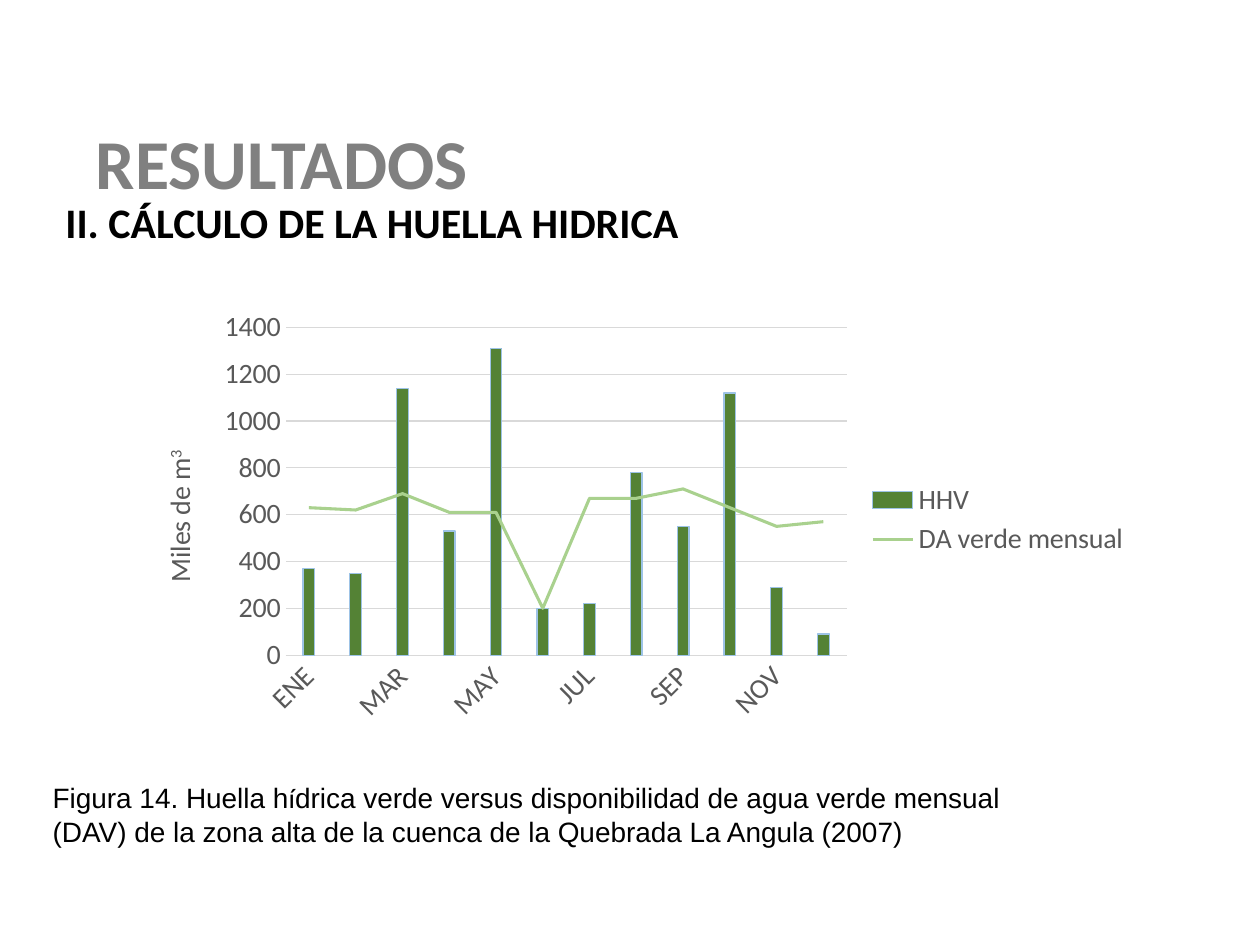
from copy import deepcopy
from lxml.etree import SubElement
from pptx import Presentation
from pptx.chart.data import CategoryChartData
from pptx.dml.color import RGBColor
from pptx.enum.chart import XL_CHART_TYPE, XL_LEGEND_POSITION, XL_MARKER_STYLE, XL_TICK_MARK
from pptx.enum.text import MSO_ANCHOR, PP_ALIGN
from pptx.oxml import parse_xml
from pptx.oxml.ns import nsdecls, qn
from pptx.util import Inches, Pt

# Content
TITLE = "RESULTADOS"
HEAD = "II. CÁLCULO DE LA HUELLA HIDRICA"
NOTE = ("Figura 14. Huella h", "í", "drica verde versus disponibilidad de agua verde "
        "mensual (DAV) de la zona alta de la cuenca de la Quebrada La Angula (2007)")
UNIT = ("Miles de m", "3")
MONTHS = ["ENE", "FEB", "MAR", "ABR.", "MAY", "JUN",
          "JUL", "AGO", "SEP", "OCT", "NOV", "DIC"]
SERIES = {
    "HHV": [370, 350, 1140, 530, 1310, 200, 220, 780, 550, 1120, 290, 90],
    "DA verde mensual": [630, 620, 690, 610, 610, 200, 670, 670, 710, 630, 550, 570],
}
PLOT = {"x": 0.16, "y": 0.06, "w": 0.55, "h": 0.75}  # shares of the chart frame
GRAY, PALE = "595959", "D9D9D9"


def color(code):
    return RGBColor.from_string(code)


def style(font, size, code, name="Calibri", bold=False):
    font.size, font.name, font.bold = Pt(size), name, bold
    font.color.rgb = color(code)


def stroke(line, code, width):
    line.color.rgb = color(code)
    line.width = Pt(width)


def place(shape, left, top, width, height):
    shape.left, shape.top = Inches(left), Inches(top)
    shape.width, shape.height = Inches(width), Inches(height)


def add_text(box, anchor=MSO_ANCHOR.TOP):
    shape = slide.shapes.add_textbox(*map(Inches, box))
    frame = shape.text_frame
    frame.word_wrap = True
    frame.vertical_anchor = anchor
    return frame.paragraphs[0]


deck = Presentation()
deck.slide_width, deck.slide_height = Inches(10), Inches(7.5)
slide = deck.slides.add_slide(deck.slide_layouts[5])

# Title and heading
title = slide.shapes.title
place(title, 0.66, 0.76, 8.62, 1.13)
title.text_frame.text = TITLE
title.text_frame.vertical_anchor = MSO_ANCHOR.MIDDLE
para = title.text_frame.paragraphs[0]
para.alignment, para.line_spacing = PP_ALIGN.LEFT, 0.9
style(para.runs[0].font, 40, "808080", bold=True)

para = add_text((0.42, 1.51, 9.11, 0.5))
para.text = HEAD
style(para.runs[0].font, 24, "000000", bold=True)

# Chart
data = CategoryChartData()
data.categories = MONTHS
for name, vals in SERIES.items():
    data.add_series(name, vals)
frame = slide.shapes.add_chart(XL_CHART_TYPE.COLUMN_CLUSTERED,
                               *map(Inches, (0.97, 2.39, 8.1, 3.47)), data)
chart = frame.chart
chart.has_title = False
style(chart.font, 16, GRAY)
chart.has_legend = True
chart.legend.position = XL_LEGEND_POSITION.RIGHT
chart.legend.include_in_layout = False
style(chart.legend.font, 16, GRAY)

# Second series becomes a line on the same axes
bars = chart.plots[0]
bars.gap_width, bars.vary_by_categories = 300, False
bar = bars.series[0]
bar.format.fill.solid()
bar.format.fill.fore_color.rgb = color("548235")
stroke(bar.format.line, "9DC3E6", 0.75)

area = chart._chartSpace.chart.plotArea
group = area.find(qn("c:barChart"))
trend = parse_xml(f'<c:lineChart {nsdecls("c")}><c:grouping val="standard"/>'
                  '<c:varyColors val="0"/></c:lineChart>')
ser = group.findall(qn("c:ser"))[1]
for flag in ser.findall(qn("c:invertIfNegative")):
    ser.remove(flag)
trend.append(ser)
SubElement(trend, qn("c:marker")).set("val", "1")
for axis in group.findall(qn("c:axId")):
    trend.append(deepcopy(axis))
group.addnext(trend)
line = chart.plots[1].series[0]
line.smooth = False
line.marker.style = XL_MARKER_STYLE.NONE
stroke(line.format.line, "A9D18E", 1.75)

# Plot position
for old in area.findall(qn("c:layout")):
    area.remove(old)
sides = "".join(f'<c:{key} val="{val}"/>' for key, val in PLOT.items())
area.insert(0, parse_xml(
    f'<c:layout {nsdecls("c")}><c:manualLayout><c:layoutTarget val="inner"/>'
    f'<c:xMode val="edge"/><c:yMode val="edge"/>{sides}</c:manualLayout></c:layout>'))

# Axes
cat, val = chart.category_axis, chart.value_axis
for axis in (cat, val):
    style(axis.tick_labels.font, 16, GRAY)
    axis.major_tick_mark = XL_TICK_MARK.NONE
stroke(cat.format.line, PALE, 0.75)
cat._element.find(qn("c:txPr")).find(qn("a:bodyPr")).set("rot", "-2700000")
skip = parse_xml(f'<c:tickLblSkip {nsdecls("c")} val="2"/>')
cat._element.find(qn("c:lblOffset")).addnext(skip)
val.minimum_scale, val.maximum_scale, val.major_unit = 0, 1400, 200
val.format.line.fill.background()
stroke(val.major_gridlines.format.line, PALE, 0.75)
para = val.axis_title.text_frame.paragraphs[0]
for part in UNIT:
    run = para.add_run()
    run.text = part
    style(run.font, 16, GRAY)
run.font._element.set("baseline", "30000")

# Caption
para = add_text((0.32, 5.86, 8.13, 1.21), MSO_ANCHOR.MIDDLE)
for part, face in zip(NOTE, ("Arial", "Calibri", "Arial")):
    run = para.add_run()
    run.text = part
    style(run.font, 16, "000000", face)

deck.save("out.pptx")
